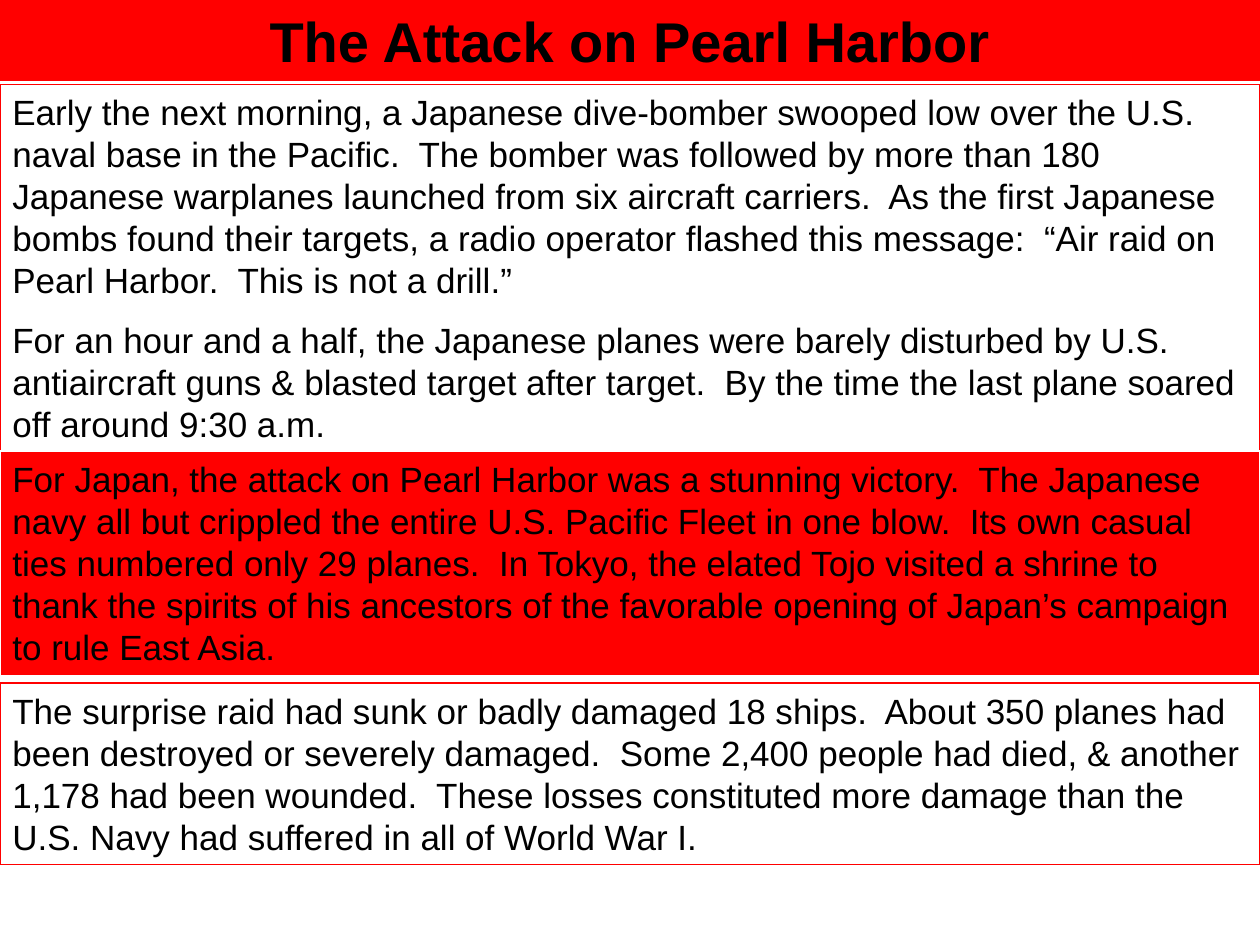
from pptx import Presentation
from pptx import util as u
from pptx.dml.color import RGBColor
from pptx.enum import shapes, text

RED = RGBColor(0xFF, 0x00, 0x00)
WHITE = RGBColor(0xFF, 0xFF, 0xFF)
BLACK = RGBColor(0x00, 0x00, 0x00)
FONT = "Arial"

TITLE = "The Attack on Pearl Harbor"
RAID = [
    "Early the next morning, a Japanese dive-bomber swooped low over the U.S. "
    "naval base in the Pacific.  The bomber was followed by more than 180 "
    "Japanese warplanes launched from six aircraft carriers.  As the first "
    "Japanese bombs found their targets, a radio operator flashed this "
    "message:  “Air raid on Pearl Harbor.  This is not a drill.”",
    "For an hour and a half, the Japanese planes were barely disturbed by U.S. "
    "antiaircraft guns & blasted target after target.  By the time the last "
    "plane soared off around 9:30 a.m.",
]
VICTORY = [
    "For Japan, the attack on Pearl Harbor was a stunning victory.  The "
    "Japanese navy all but crippled the entire U.S. Pacific Fleet in one "
    "blow.  Its own casual ties numbered only 29 planes.  In Tokyo, the elated "
    "Tojo visited a shrine to thank the spirits of his ancestors of the "
    "favorable opening of Japan’s campaign to rule East Asia.",
]
LOSSES = [
    "The surprise raid had sunk or badly damaged 18 ships.  About 350 planes "
    "had been destroyed or severely damaged.  Some 2,400 people had died, & "
    "another 1,178 had been wounded.  These losses constituted more damage "
    "than the U.S. Navy had suffered in all of World War I.",
]


def add_band(s, box, paragraphs, fill, line, size=20, bold=False,
             align=text.PP_ALIGN.LEFT):
    """Place a filled, outlined band of text in box (left, top, width, height)."""
    sp = s.shapes.add_shape(shapes.MSO_SHAPE.RECTANGLE, *box)
    sp.shadow.inherit = False
    sp.fill.solid()
    sp.fill.fore_color.rgb = fill
    sp.line.color.rgb = line
    sp.line.width = u.Pt(0.75)

    tf = sp.text_frame
    tf.word_wrap = True
    tf.auto_size = text.MSO_AUTO_SIZE.SHAPE_TO_FIT_TEXT
    tf.vertical_anchor = text.MSO_ANCHOR.TOP
    tf.text = "\n".join(paragraphs)
    for i, p in enumerate(tf.paragraphs):
        p.alignment = align
        p.space_before = u.Pt(size / 2 if i else 0)
        for r in p.runs:
            r.font.name = FONT
            r.font.size = u.Pt(size)
            r.font.bold = bold
            r.font.color.rgb = BLACK


def main():
    prs = Presentation()
    prs.slide_width, prs.slide_height = u.Inches(10), u.Inches(7.5)
    s = prs.slides.add_slide(prs.slide_layouts[6])

    def full_width(top, height):
        return 0, u.Inches(top), prs.slide_width, u.Inches(height)

    # Title banner
    add_band(s, full_width(0, 0.64), [TITLE], RED, RED, size=32, bold=True,
             align=text.PP_ALIGN.CENTER)

    # Story bands, from top to bottom
    add_band(s, full_width(0.67, 2.94), RAID, WHITE, RED)
    add_band(s, full_width(3.58, 1.78), VICTORY, RED, WHITE)
    add_band(s, full_width(5.42, 1.44), LOSSES, WHITE, RED)

    prs.save("out.pptx")


if __name__ == "__main__":
    main()
